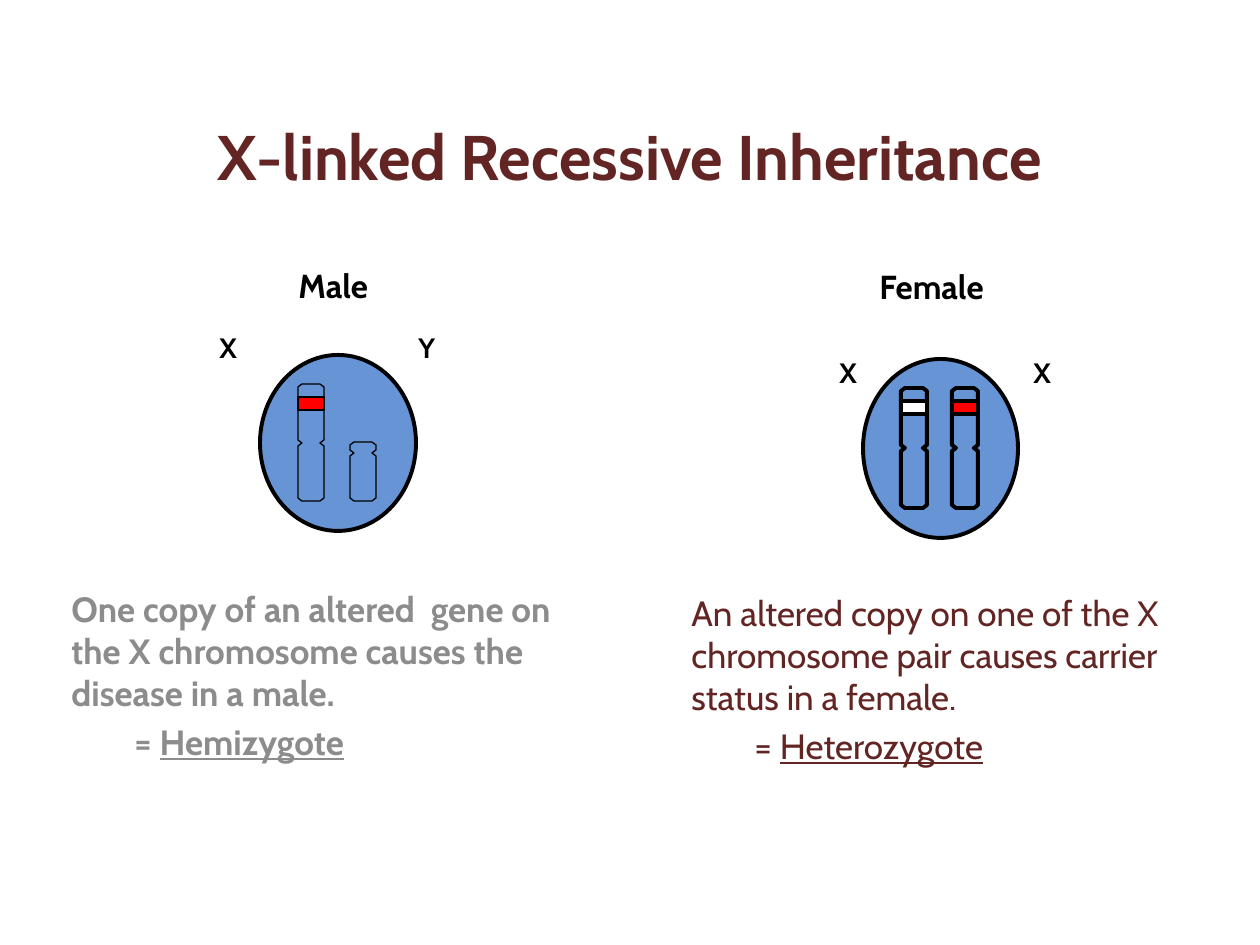
from pptx import Presentation
from pptx import util as u
from pptx.dml.color import RGBColor
from pptx.enum import shapes, text

SCALE = 914400 / 126
FONT = "Cabin"
BLACK, RED, WHITE, BLUE = "000000", "FF0000", "FFFFFF", "6694D4"
MAROON, GREY = "632523", "8C8C8C"


def px(length):
    """Turn pixels into EMU."""
    return u.Emu(round(length * SCALE))


def color(value):
    """Turn a hex string into a colour."""
    return RGBColor.from_string(value)


def add_run(paragraph, words, size, value, bold=False, underline=None):
    """Add one formatted run."""
    run = paragraph.add_run()
    run.text = words
    font = run.font
    font.name, font.size, font.bold, font.underline = FONT, u.Pt(size), bold, underline
    font.color.rgb = color(value)


def style(shape, fill, line_width):
    """Give a shape its fill and black outline."""
    shape.shadow.inherit = False
    if fill:
        shape.fill.solid()
        shape.fill.fore_color.rgb = color(fill)
    else:
        shape.fill.background()
    shape.line.color.rgb = color(BLACK)
    shape.line.width = u.Pt(line_width)


def add_title(slide, box, words):
    """Place and format the title."""
    title = slide.shapes.title
    title.left, title.top, title.width, title.height = map(px, box)
    title.text_frame.vertical_anchor = text.MSO_ANCHOR.MIDDLE
    paragraph = title.text_frame.paragraphs[0]
    paragraph.alignment = text.PP_ALIGN.CENTER
    add_run(paragraph, words, 36, MAROON, True)


def add_label(slide, box, words, size, heading=False):
    """Add a one-line bold label."""
    frame = slide.shapes.add_textbox(*map(px, box)).text_frame
    frame.word_wrap = False
    frame.auto_size = text.MSO_AUTO_SIZE.SHAPE_TO_FIT_TEXT
    paragraph = frame.paragraphs[0]
    if heading:
        frame.vertical_anchor = text.MSO_ANCHOR.MIDDLE
        paragraph.line_spacing = 0.85
        paragraph.space_before = u.Pt(6)
    add_run(paragraph, words, size, BLACK, True)


def add_description(slide, box, sentence, term, value, bold):
    """Add an explanation followed by its underlined term."""
    frame = slide.shapes.add_textbox(*map(px, box)).text_frame
    frame.word_wrap = True
    explanation, result = frame.paragraphs[0], frame.add_paragraph()
    explanation.space_before = result.space_before = u.Pt(4)
    add_run(explanation, sentence, 20, value, bold)
    add_run(result, "\t= ", 20, value, bold)
    add_run(result, term, 20, value, bold, True)


def add_chromosome(parent, box, waist, line_width, band=None):
    """Draw a pinched chromosome and, if it has one, its gene band."""
    left, top, width, height = box
    side = [(4, 0), (0, 3), (0, waist - 3), (4, waist), (0, waist + 3),
            (0, height - 3), (4, height)]
    outline = side + [(width - x, y) for x, y in reversed(side)]
    points = [(px(left + x), px(top + y)) for x, y in outline]
    builder = parent.shapes.build_freeform(*points[0], scale=1.0)
    builder.add_line_segments(points[1:], close=True)
    style(builder.convert_to_shape(), None, line_width)
    if band:
        gene = parent.shapes.add_shape(
            shapes.MSO_SHAPE.RECTANGLE, *map(px, (left, top + 13, width, 13)))
        style(gene, band, line_width)


def add_cell(slide, box, line_width, chromosomes):
    """Draw a cell with chromosomes given as offset box, waist and band."""
    left, top, width, height = box
    cell = slide.shapes.add_group_shape()
    body = cell.shapes.add_shape(shapes.MSO_SHAPE.OVAL, *map(px, box))
    style(body, BLUE, 2.25)
    for (x, y, chromosome_width, chromosome_height), waist, band in chromosomes:
        add_chromosome(cell, (left + x, top + y, chromosome_width, chromosome_height),
                       waist, line_width, band)


def main():
    """Build and save the slide."""
    presentation = Presentation()
    presentation.slide_width, presentation.slide_height = px(1260), px(945)
    slide = presentation.slides.add_slide(presentation.slide_layouts[5])
    add_title(slide, (29, 108, 1201, 95), "X-linked Recessive Inheritance")

    add_description(
        slide, (59, 581, 551, 266),
        "One copy of an altered  gene on the X chromosome causes the disease in a male.",
        "Hemizygote", GREY, True)
    add_cell(slide, (260, 355, 156, 176), 0,
             [((38, 29, 26, 117), 59, RED), ((90, 87, 26, 59), 11, None)])
    add_label(slide, (286, 265, 100, 47), "Male", 19, True)

    add_cell(slide, (863, 359, 155, 179), 2.25,
             [((x, 29, 26, 120), 60, band) for x, band in ((38, WHITE), (89, RED))])
    add_description(
        slide, (679, 585, 495, 282),
        "An altered copy on one of the X chromosome pair causes carrier status in a female.",
        "Heterozygote", MAROON, False)
    add_label(slide, (867, 266, 130, 47), "Female", 19, True)

    for left, top, letter in ((827, 349, "X"), (1021, 349, "X"),
                              (207, 324, "X"), (406, 324, "Y")):
        add_label(slide, (left, top, 42, 47), letter, 16)
    presentation.save("out.pptx")


if __name__ == "__main__":
    main()
